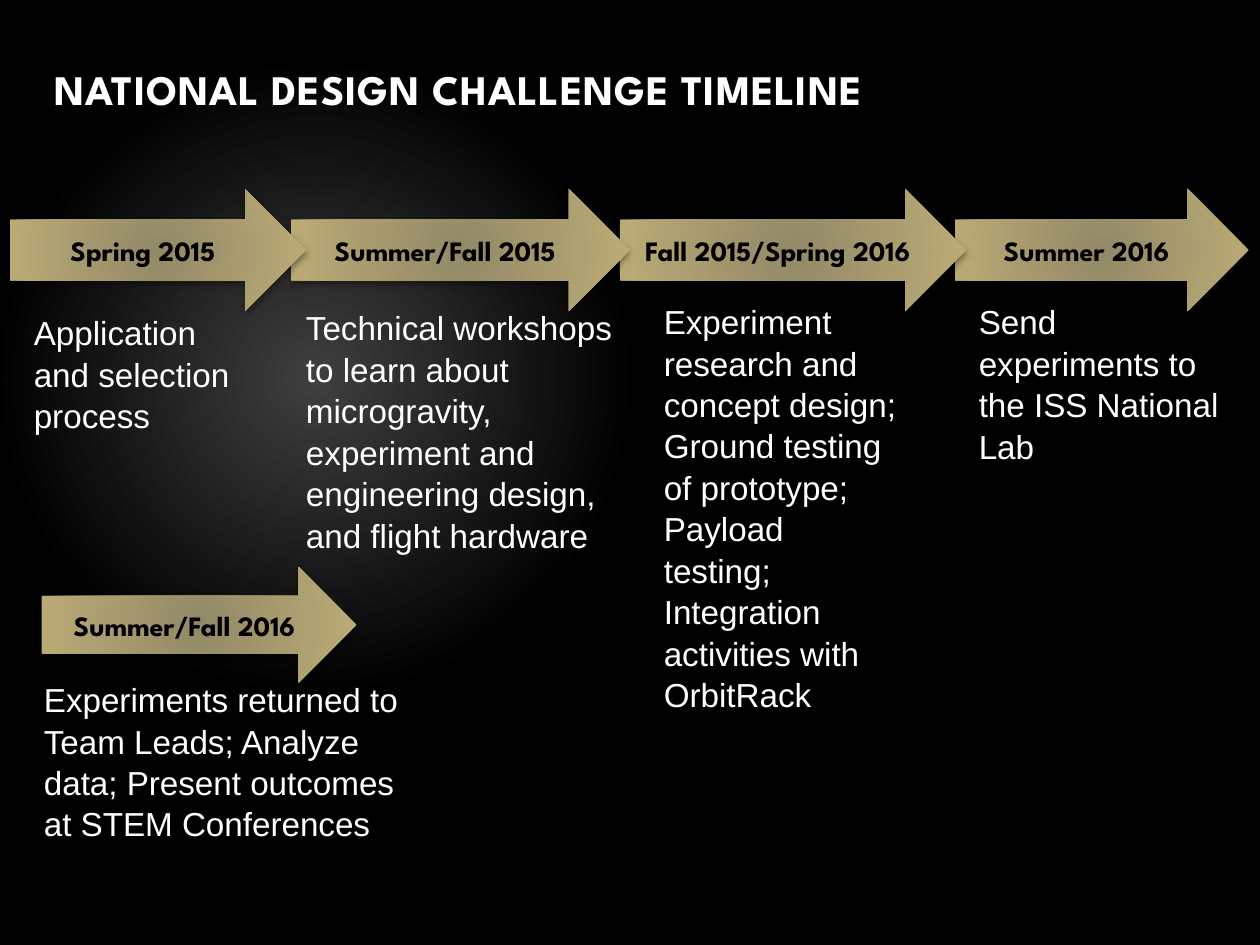
from lxml import etree
from pptx import Presentation
from pptx.dml.color import RGBColor
from pptx.enum.shapes import MSO_SHAPE
from pptx.enum.text import MSO_ANCHOR, MSO_AUTO_SIZE, PP_ALIGN
from pptx.oxml import parse_xml
from pptx.oxml.ns import nsdecls, qn
from pptx.util import Inches, Pt

ARROW = MSO_SHAPE.RIGHT_ARROW
LEFT, CENTER = PP_ALIGN.LEFT, PP_ALIGN.CENTER
TOP, MIDDLE = MSO_ANCHOR.TOP, MSO_ANCHOR.MIDDLE
GROW = MSO_AUTO_SIZE.SHAPE_TO_FIT_TEXT

# Content: heading, (left, width) of arrow, paragraphs, (left, top, width, height) of text
TITLE = "NATIONAL DESIGN CHALLENGE TIMELINE"
FIRST_ROW, SECOND_ROW = (1.5, 0.97), (4.5, 0.92)
STAGES = [
    ("Spring 2015", (0.08, 2.35), FIRST_ROW,
     ["Application", "and selection process"], (0.17, 2.42, 2.08, 1.06)),
    ("Summer/Fall 2015", (2.31, 2.69), FIRST_ROW,
     ["Technical workshops to learn about microgravity, experiment and "
      "engineering design, and flight hardware"], (2.33, 2.38, 2.75, 2.02)),
    ("Fall 2015/Spring 2016", (4.92, 2.75), FIRST_ROW,
     ["Experiment research and concept design; Ground testing of prototype; "
      "Payload testing; Integration activities with OrbitRack"],
     (5.17, 2.33, 2.05, 3.3)),
    ("Summer 2016", (7.58, 2.33), FIRST_ROW,
     ["Send experiments to the ISS National Lab"], (7.67, 2.33, 2.17, 1.38)),
    ("Summer/Fall 2016", (0.33, 2.5), SECOND_ROW,
     ["Experiments returned to Team Leads; Analyze data; Present outcomes "
      "at STEM Conferences"], (0.25, 5.33, 3.08, 1.7)),
]

# Formats
COLORS = {"white": "FFFFFF", "black": "000000", "glow": "3F3F3F",
          "gold": "BCAC76", "bronze": "928967"}
TITLE_FONT = {"name": "League Spartan", "size": Pt(24), "bold": True}
LABEL_FONT = {"name": "League Spartan", "size": Pt(16), "bold": True}
BODY_FONT = {"name": "Arial", "size": Pt(19), "bold": False}
BACKDROP = ([(0, "glow"), (41, "black"), (100, "black")], (50, 80, 100, 100))
METAL = ([(0, "bronze"), (100, "gold")], (100, 100, 100, 100))


def radial_fill(owner, fill, gradient):
    """Turn the fill of a shape or slide into a circular gradient."""
    stops, focus = gradient
    fill.gradient()
    old = owner.find(".//" + qn("a:gradFill"))
    stop_xml = "".join(
        f'<a:gs pos="{share * 1000}"><a:srgbClr val="{COLORS[color]}"/></a:gs>'
        for share, color in stops)
    sides = " ".join(f'{side}="{share * 1000}"' for side, share in zip("ltrb", focus))
    old.getparent().replace(old, parse_xml(
        f'<a:gradFill {nsdecls("a")} rotWithShape="1"><a:gsLst>{stop_xml}</a:gsLst>'
        f'<a:path path="circle"><a:fillToRect {sides}/></a:path></a:gradFill>'))


def drop_shadow(shape):
    shape.shadow.inherit = False
    effects = shape.element.spPr.find(qn("a:effectLst"))
    shadow = etree.SubElement(effects, qn("a:outerShdw"), blurRad=str(Pt(4)),
                              dist=str(Pt(2)), dir="5400000", rotWithShape="0")
    color = etree.SubElement(shadow, qn("a:srgbClr"), val=COLORS["black"])
    etree.SubElement(color, qn("a:alpha"), val="40000")


def write(shape, paragraphs, font, color, align=LEFT, anchor=TOP, spacing=1.0):
    frame = shape.text_frame
    frame.word_wrap, frame.vertical_anchor = True, anchor
    for index, text in enumerate(paragraphs):
        para = frame.add_paragraph() if index else frame.paragraphs[0]
        para.alignment, para.line_spacing = align, spacing
        span = para.add_run()
        span.text = text
        for name, value in font.items():
            setattr(span.font, name, value)
        span.font.color.rgb = RGBColor.from_string(COLORS[color])


deck = Presentation()
deck.slide_width, deck.slide_height = Inches(10), Inches(7.5)
page = deck.slides.add_slide(deck.slide_layouts[5])
radial_fill(page.element, page.background.fill, BACKDROP)

# Title
title = page.shapes.title
title.left, title.top, title.width, title.height = map(Inches, (0.33, 0.08, 8.78, 1.25))
write(title, [TITLE], TITLE_FONT, "white", anchor=MIDDLE)
title.text_frame.paragraphs[0].runs[0].font._element.set("spc", "50")

# Stages, last one first so each arrowhead overlaps the next arrow
for heading, (left, width), (top, height), paragraphs, place in reversed(STAGES):
    arrow = page.shapes.add_shape(ARROW, *map(Inches, (left, top, width, height)))
    radial_fill(arrow.element, arrow.fill, METAL)
    arrow.line.fill.background()
    drop_shadow(arrow)
    write(arrow, [heading], LABEL_FONT, "black", CENTER, MIDDLE)

    box = page.shapes.add_textbox(*map(Inches, place))
    write(box, paragraphs, BODY_FONT, "white", spacing=1.04)
    box.text_frame.auto_size = GROW

deck.save("out.pptx")
